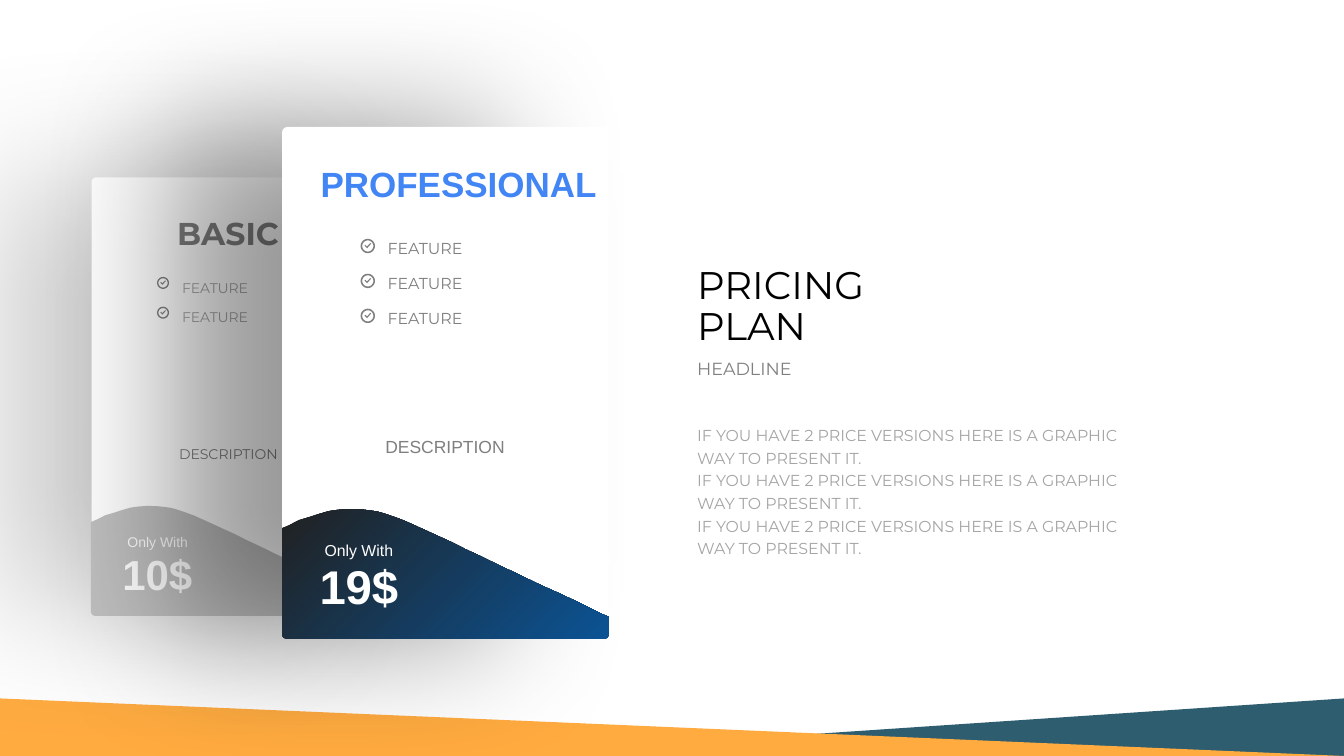
from dataclasses import dataclass
from math import cos, pi, sin

from lxml.etree import SubElement
from pptx import Presentation
from pptx.dml.color import RGBColor as RGB
from pptx.enum.shapes import MSO_SHAPE as SHAPE
from pptx.enum.text import PP_ALIGN as ALIGN
from pptx.oxml.ns import qn
from pptx.util import Cm, Pt


@dataclass(frozen=True)
class Theme:
    white: str = "FFFFFF"
    black: str = "000000"
    grey: str = "7F7F7F"
    pale: str = "A5A5A5"
    silver: str = "BFBFBF"
    blue: str = "4285F4"
    night: str = "212121"
    navy: str = "0B5394"
    teal: str = "2D5D6F"
    orange: str = "FFAB40"
    sans: str = "Arial"
    display: str = "Montserrat"
    heading: float = 27.5
    headline: float = 12.5
    body: float = 11.25


T = Theme()
SLIDE_W, SLIDE_H = 33.87, 19.05

# Outline of the wave, in percent of its box
WAVE = [(0, 14.7), (2.2, 12.4), (5.2, 8.5), (8.3, 6.2), (11.1, 3.9), (14.2, 1.6),
        (17, 0.6), (20, 0), (21.3, 0), (23.8, 0.2), (26.2, 0.8), (29, 1.8),
        (31.5, 3.6), (34.3, 6), (37.3, 8.8), (40.4, 12.3), (43.8, 16.2),
        (47.5, 20.5), (51.9, 25.5), (56.2, 31), (61, 36.6), (66.4, 43.3),
        (72, 49.8), (78, 57.2), (84.9, 65), (91.7, 73), (97.8, 80.8), (100, 83)]
CHECK = [(74, 33), (45, 66), (27, 48), (33, 42), (44, 54), (67, 30)]

# Boxes are left, top, width, height in cm; those inside a card start at its corner
BASIC = dict(
    box=(2.31, 4.47, 6.98, 10.92), shadow=(T.grey, 62),
    wave=(-0.02, 8.28, 6.98, 2.77), wave_fill=[T.silver],
    feature=(2.03, 2.44, 2.77, 0.69), step=0.75, count=2, icon=(1.65, 2.51, 0.3, 0.3),
    feature_format=dict(size=10, name=T.display, color=T.pale),
    texts=[
        ("BASIC", (0.76, 0.97, 5.36, 1.04), 0.8,
         dict(size=22.5, name=T.display, color=T.grey, bold=True)),
        ("DESCRIPTION", (0.23, 6.55, 6.43, 0.74), 1.2,
         dict(size=10, name=T.display, color=T.grey)),
        ("10$", (0.41, 9.22, 2.49, 1.55), 1,
         dict(size=30, name=T.sans, color=T.white, bold=True)),
        ("Only With", (0.61, 8.86, 2.11, 0.69), 1,
         dict(size=10, name=T.sans, color=T.white)),
    ])
PROFESSIONAL = dict(
    box=(7.11, 3.2, 8.23, 12.9), shadow=(T.black, 78),
    wave=(0, 9.63, 8.23, 3.27), wave_fill=[T.night, T.navy],
    feature=(2.41, 2.7, 3.61, 0.74), step=0.88, count=3, icon=(1.98, 2.82, 0.36, 0.36),
    feature_format=dict(size=T.body, name=T.display, color=T.grey),
    texts=[
        ("PROFESSIONAL", (0.56, 0.97, 7.77, 1.14), 0.8,
         dict(size=25, name=T.sans, color=T.blue, bold=True)),
        ("DESCRIPTION", (0.56, 7.57, 7.09, 0.86), 1.2,
         dict(size=12.5, name=T.sans, color=T.grey)),
        ("19$", (0.46, 10.72, 2.95, 1.7), 1,
         dict(size=33.75, name=T.sans, color=T.white, bold=True)),
        ("Only With", (0.69, 10.29, 2.49, 0.74), 1,
         dict(size=T.body, name=T.sans, color=T.white)),
    ])


def within(parent, box, down=0):
    x, y, w, h = box
    return parent[0] + x, parent[1] + y + down, w, h


def paint(s, *colors):
    """Fill with one colour, or with a diagonal gradient of two."""
    s.shadow.inherit = False
    s.line.fill.background()
    if len(colors) == 1:
        s.fill.solid()
        s.fill.fore_color.rgb = RGB.from_string(colors[0])
        return
    s.fill.gradient()
    s.fill.gradient_angle = 315
    for stop, color in zip(s.fill.gradient_stops, colors):
        stop.color.rgb = RGB.from_string(color)


def add_text(shapes, box, paragraphs, fmt, spacing=1.0, align=ALIGN.LEFT):
    tf = shapes.add_textbox(*map(Cm, box)).text_frame
    tf.word_wrap = True
    for i, text in enumerate(paragraphs):
        p = tf.paragraphs[0] if i == 0 else tf.add_paragraph()
        p.alignment, p.line_spacing = align, spacing
        r = p.add_run()
        r.text = text
        for key, value in fmt.items():
            if key == "color":
                r.font.color.rgb = RGB.from_string(value)
            else:
                setattr(r.font, key, Pt(value) if key == "size" else value)


def add_outline(shapes, box, contours, *colors):
    """Closed contours, given in percent of the box, as one shape."""
    x, y, w, h = box
    builder = None
    for contour in contours:
        pts = [(Cm(x + w * px / 100), Cm(y + h * py / 100)) for px, py in contour]
        if builder is None:
            builder = shapes.build_freeform(*pts[0])
        else:
            builder.move_to(*pts[0])
        builder.add_line_segments(pts[1:], close=True)
    paint(builder.convert_to_shape(), *colors)


def arc(cx, cy, rx, ry, start, end, steps):
    angles = [(start + (end - start) * i / steps) * pi / 180 for i in range(steps + 1)]
    return [(cx + rx * cos(a), cy + ry * sin(a)) for a in angles]


def add_wave(shapes, box, *colors):
    rx, ry = 1.7, 4
    corners = (arc(100 - rx, 100 - ry, rx, ry, 0, 90, 6)
               + arc(rx, 100 - ry, rx, ry, 90, 180, 6))
    add_outline(shapes, box, [WAVE + corners], *colors)


def add_tick(shapes, box):
    rings = [arc(50, 50, r, r, 0, 360, 36) for r in (50, 39)]
    add_outline(shapes, box, rings + [CHECK], T.grey)


def add_panel(shapes, box, shadow_color, distance):
    s = shapes.add_shape(SHAPE.ROUNDED_RECTANGLE, *map(Cm, box))
    s.adjustments[0] = 0.016
    paint(s, T.white)
    effects = s.element.spPr.find(qn("a:effectLst"))
    shadow = SubElement(effects, qn("a:outerShdw"), blurRad=str(Pt(100)),
                        dist=str(Pt(distance)), dir="10800000", algn="ctr", rotWithShape="0")
    color = SubElement(shadow, qn("a:srgbClr"), val=shadow_color)
    SubElement(color, qn("a:alpha"), val="40000")


def add_card(slide, box, shadow, wave, wave_fill, feature, step, count, icon,
             feature_format, texts):
    shapes = slide.shapes.add_group_shape().shapes
    add_panel(shapes, box, *shadow)
    add_wave(shapes, within(box, wave), *wave_fill)
    for i in range(count):
        add_text(shapes, within(box, feature, i * step), ["FEATURE"], feature_format)
        add_tick(shapes, within(box, icon, i * step))
    for text, place, spacing, fmt in texts:
        add_text(shapes, within(box, place), [text], fmt, spacing, ALIGN.CENTER)


def add_footer(slide, box):
    x, y, w, h = box
    teal_x = 12.26
    for left, color, flip in ((teal_x, T.teal, True), (0, T.orange, False)):
        s = slide.shapes.add_shape(SHAPE.RIGHT_TRIANGLE,
                                   *map(Cm, (x + left, y, w - left, h)))
        if flip:
            s.element.spPr.xfrm.set("flipH", "1")
        paint(s, color)


def add_intro(slide, box):
    x, y, w, h = box
    fmt = dict(name=T.display)
    body = "IF YOU HAVE 2 PRICE VERSIONS HERE IS A GRAPHIC WAY TO PRESENT IT."
    add_text(slide.shapes, (x, y + 3.93, w, h - 3.93), [body] * 3,
             dict(fmt, size=T.body, color=T.pale), 1.2)
    add_text(slide.shapes, (x, y, 6.35, 1.19), ["PRICING PLAN"],
             dict(fmt, size=T.heading, color=T.black), 0.9)
    add_text(slide.shapes, (x, y + 2.21, 10.92, 0.86), ["HEADLINE"],
             dict(fmt, size=T.headline, color=T.grey), 1.2)


def main():
    prs = Presentation()
    prs.slide_width, prs.slide_height = Cm(SLIDE_W), Cm(SLIDE_H)
    slide = prs.slides.add_slide(prs.slide_layouts[6])
    add_footer(slide, (0, 17.6, SLIDE_W, 1.45))
    for card in (BASIC, PROFESSIONAL):
        add_card(slide, **card)
    add_intro(slide, (17.32, 6.58, 12.12, 8.2))
    prs.save("out.pptx")


if __name__ == "__main__":
    main()
